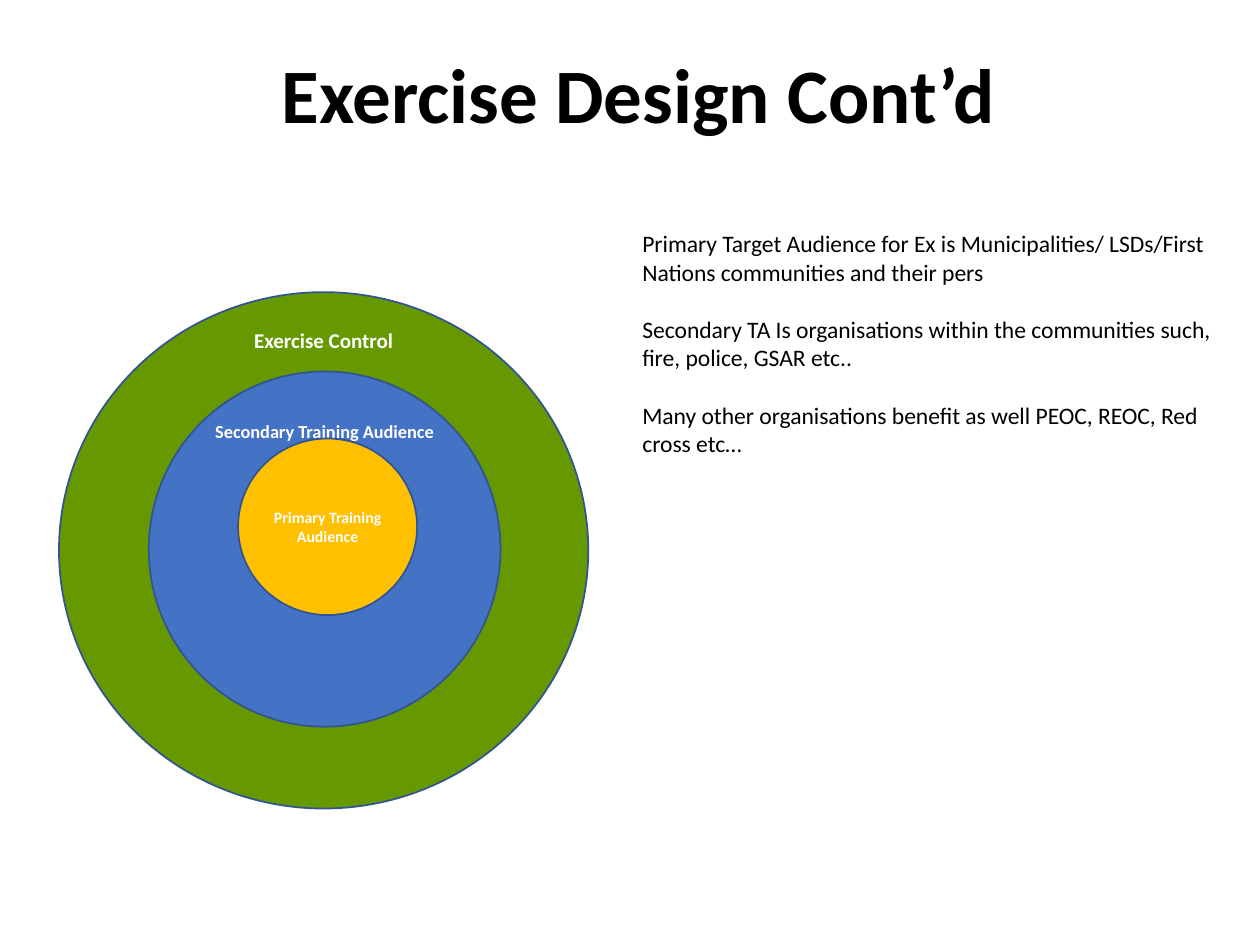
"""Build the exercise design slide with nested training audience circles."""
from pptx import Presentation
from pptx.dml.color import RGBColor
from pptx.enum.shapes import MSO_SHAPE as Shape
from pptx.enum.text import MSO_ANCHOR as Anchor, PP_ALIGN as Align
from pptx.util import Cm, Pt

COLORS = {
    "black": "000000",
    "white": "FFFFFF",
    "outline": "325491",
    "control": "669900",
    "secondary": "4472C4",
    "primary": "FFC000",
}
TITLE = "Exercise Design Cont’d"
AUDIENCES = [
    "Primary Target Audience for Ex is Municipalities/ LSDs/First Nations communities and their pers",
    "Secondary TA Is organisations within the communities such, fire, police, GSAR etc..",
    "Many other organisations benefit as well PEOC, REOC, Red cross etc…",
]
RINGS = [
    {"text": "Exercise Control", "color": "control", "size": 12,
     "box": (1.19, 5.89, 10.67, 10.41), "label_middle": 6.85},
    {"text": "Secondary Training Audience", "color": "secondary", "size": 10.5,
     "box": (3.0, 7.49, 7.09, 7.16), "label_middle": 8.69},
    {"text": "Primary Training Audience", "color": "primary", "size": 9,
     "box": (4.8, 8.84, 3.61, 3.56), "label_middle": None},
]
LABEL_HEIGHT = 0.8


def color(name):
    return RGBColor.from_string(COLORS[name])


def write(shape, *texts, size, ink="black", bold=False, align=Align.LEFT,
          anchor=Anchor.TOP, gap=0, line_spacing=1.0):
    frame = shape.text_frame
    frame.word_wrap = True
    frame.vertical_anchor = anchor
    for index, text in enumerate(texts):
        paragraph = frame.add_paragraph() if index else frame.paragraphs[0]
        paragraph.text = text
        paragraph.alignment = align
        paragraph.line_spacing = line_spacing
        if index:
            paragraph.space_before = Pt(gap)
        font = paragraph.font
        font.name, font.size, font.bold = "Calibri", Pt(size), bold
        font.color.rgb = color(ink)


def add_text(slide, box, *texts, **style):
    write(slide.shapes.add_textbox(*map(Cm, box)), *texts, **style)


def add_ring(slide, ring):
    left, top, width, height = ring["box"]
    circle = slide.shapes.add_shape(Shape.OVAL, *map(Cm, ring["box"]))
    circle.shadow.inherit = False
    circle.fill.solid()
    circle.fill.fore_color.rgb = color(ring["color"])
    circle.line.color.rgb = color("outline")
    circle.line.width = Pt(1)
    style = {"size": ring["size"], "ink": "white", "bold": True,
             "align": Align.CENTER, "anchor": Anchor.MIDDLE}
    if ring["label_middle"] is None:
        frame = circle.text_frame
        frame.margin_left = frame.margin_right = Cm(0.18)
        write(circle, ring["text"], **style)
    else:
        label_top = ring["label_middle"] - LABEL_HEIGHT / 2
        add_text(slide, (left, label_top, width, LABEL_HEIGHT), ring["text"], **style)


def main():
    presentation = Presentation()
    presentation.slide_width, presentation.slide_height = Cm(25.4), Cm(19.05)
    slide = presentation.slides.add_slide(presentation.slide_layouts[6])
    add_text(slide, (1.93, 1.02, 21.9, 3.68), TITLE, size=44, bold=True,
             align=Align.CENTER, line_spacing=0.9)
    for ring in RINGS:
        add_ring(slide, ring)
    add_text(slide, (12.7, 4.5, 12.34, 6.02), *AUDIENCES, size=13.5, gap=16.5)
    presentation.save("out.pptx")


if __name__ == "__main__":
    main()
